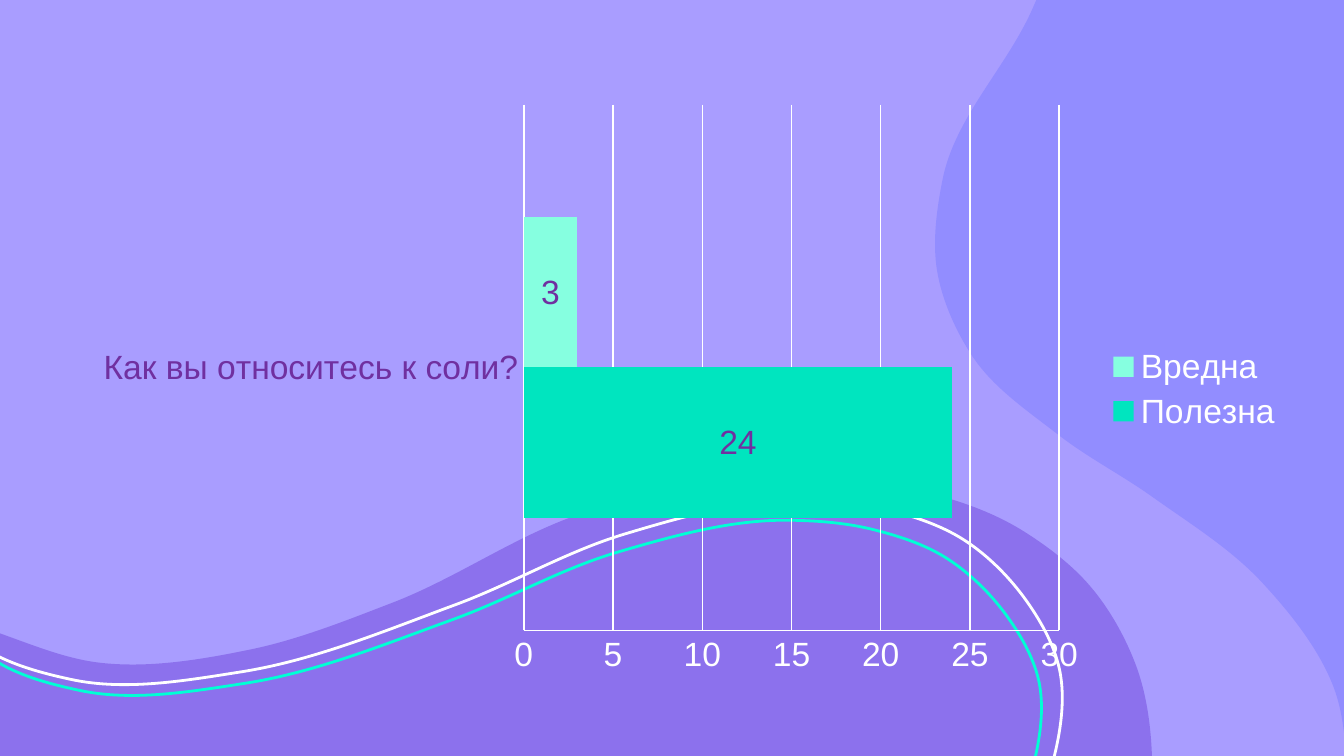
from dataclasses import dataclass
from typing import Optional

from pptx import Presentation
from pptx.chart.data import CategoryChartData
from pptx.dml.color import RGBColor
from pptx.enum.chart import XL_CHART_TYPE, XL_LABEL_POSITION, XL_LEGEND_POSITION, XL_TICK_MARK
from pptx.oxml.ns import qn
from pptx.oxml.xmlchemy import OxmlElement
from pptx.util import Pt

WHITE, TEAL, PURPLE = "FFFFFF", "00FFD5", "7030A0"
Point = tuple[float, float]


@dataclass
class Wave:
    """A smooth edge through knots; a filled wave is closed by straight corners."""
    knots: list[Point]
    corners: tuple[Point, ...] = ()
    fill: Optional[str] = None
    alpha: int = 100
    line: Optional[str] = None


@dataclass
class Series:
    name: str
    value: int
    color: str


OUTER_LINE = [(-35, 322), (-12, 345), (38, 364), (129, 360), (244, 324), (335, 286), (430, 268),
              (475, 273), (516, 289), (547, 318), (567, 356), (560, 422), (524, 483)]
INNER_LINE = [(-28 + 0.97 * (x + 35), 330 + 0.95 * (y - 322)) for x, y in OUTER_LINE]

WAVES = [
    Wave([(572, -42), (553, 5), (505, 96), (502, 145), (521, 191), (567, 233),
          (617, 266), (676, 312), (714, 367), (724, 435)],
         corners=((899, 331), (769, 83), (721, -5)), fill="928DFF"),
    Wave([(-13, 335), (53, 355), (134, 348), (210, 323), (315, 274), (381, 259),
          (456, 257), (549, 285), (584, 314), (608, 355), (617, 427), (602, 498)],
         corners=((492, 623), (-18, 561)), fill="6E43DA", alpha=48),
    Wave(OUTER_LINE, line=WHITE),
    Wave(INNER_LINE, line=TEAL),
]

SERIES = [Series("Полезна", 24, "00E5BF"), Series("Вредна", 3, "86FFE0")]


def paint(fill, color: str) -> None:
    fill.solid()
    fill.fore_color.rgb = RGBColor.from_string(color)


def style_font(font, color: str) -> None:
    for name, value in {"name": "Arial", "size": Pt(18)}.items():
        setattr(font, name, value)
    paint(font.fill, color)


def style_line(line, color: str, width: float) -> None:
    paint(line.fill, color)
    line.width = Pt(width)


def curve_points(knots: list[Point]) -> list[Point]:
    """Return two handles and an end point for each curve between knots."""
    spots = [complex(*knot) for knot in knots]
    steps = [b - a for a, b in zip(spots, spots[1:])]
    units = [step / abs(step) for step in steps]
    tangents = [units[0]]
    for i in range(1, len(steps)):
        before, after = abs(steps[i - 1]), abs(steps[i])
        tangents.append((units[i - 1] * after + units[i] * before) / (before + after))
    tangents.append(units[-1])

    points = []
    for i, step in enumerate(steps):
        reach = abs(step) / 3
        points += [spots[i] + tangents[i] * reach,
                   spots[i + 1] - tangents[i + 1] * reach, spots[i + 1]]
    return [(point.real, point.imag) for point in points]


def add_wave(s, wave: Wave) -> None:
    """Draw all points as a freeform, then merge each three edge segments into a curve."""
    edge = curve_points(wave.knots)
    x, y = wave.knots[0]
    builder = s.shapes.build_freeform(Pt(x), Pt(y))
    builder.add_line_segments([(Pt(px), Pt(py)) for px, py in [*edge, *wave.corners]],
                              close=wave.fill is not None)
    sp = builder.convert_to_shape()
    sp.shadow.inherit = False

    segments = sp._element.findall(".//" + qn("a:lnTo"))
    for i in range(0, len(edge), 3):
        curve = OxmlElement("a:cubicBezTo")
        segments[i].addprevious(curve)
        for segment in segments[i:i + 3]:
            curve.append(segment[0])
            segment.getparent().remove(segment)

    if wave.fill:
        paint(sp.fill, wave.fill)
        sp.line.fill.background()
        if wave.alpha < 100:
            alpha = OxmlElement("a:alpha")
            alpha.set("val", str(wave.alpha * 1000))
            sp._element.spPr.find(".//" + qn("a:srgbClr")).append(alpha)
    else:
        sp.fill.background()
        style_line(sp.line, wave.line, 1.5)


def add_survey_chart(s) -> None:
    data = CategoryChartData()
    data.categories = ["Как вы относитесь к соли?"]
    for item in SERIES:
        data.add_series(item.name, [item.value])
    chart = s.shapes.add_chart(XL_CHART_TYPE.BAR_CLUSTERED, Pt(42.5), Pt(49.7),
                               Pt(652.3), Pt(317.5), data).chart
    style_font(chart.font, WHITE)
    chart.has_title = False
    chart.has_legend = True
    chart.legend.position = XL_LEGEND_POSITION.RIGHT
    chart.legend.include_in_layout = False

    for axis, color in ((chart.category_axis, PURPLE), (chart.value_axis, WHITE)):
        axis.major_tick_mark = axis.minor_tick_mark = XL_TICK_MARK.NONE
        style_font(axis.tick_labels.font, color)
        style_line(axis.format.line, WHITE, 0.75)
    chart.value_axis.has_major_gridlines = True
    style_line(chart.value_axis.major_gridlines.format.line, WHITE, 0.75)

    plot = chart.plots[0]
    for name, value in {"gap_width": 150, "overlap": 0, "vary_by_categories": False}.items():
        setattr(plot, name, value)
    for series, item in zip(plot.series, SERIES):
        paint(series.format.fill, item.color)
        labels = series.data_labels
        labels.show_value = True
        labels.position = XL_LABEL_POSITION.CENTER
        style_font(labels.font, PURPLE)


def main() -> None:
    prs = Presentation()
    prs.slide_width, prs.slide_height = Pt(720), Pt(405)
    s = prs.slides.add_slide(prs.slide_layouts[6])
    paint(s.background.fill, "A99DFF")
    for wave in WAVES:
        add_wave(s, wave)
    add_survey_chart(s)
    prs.save("out.pptx")


if __name__ == "__main__":
    main()
